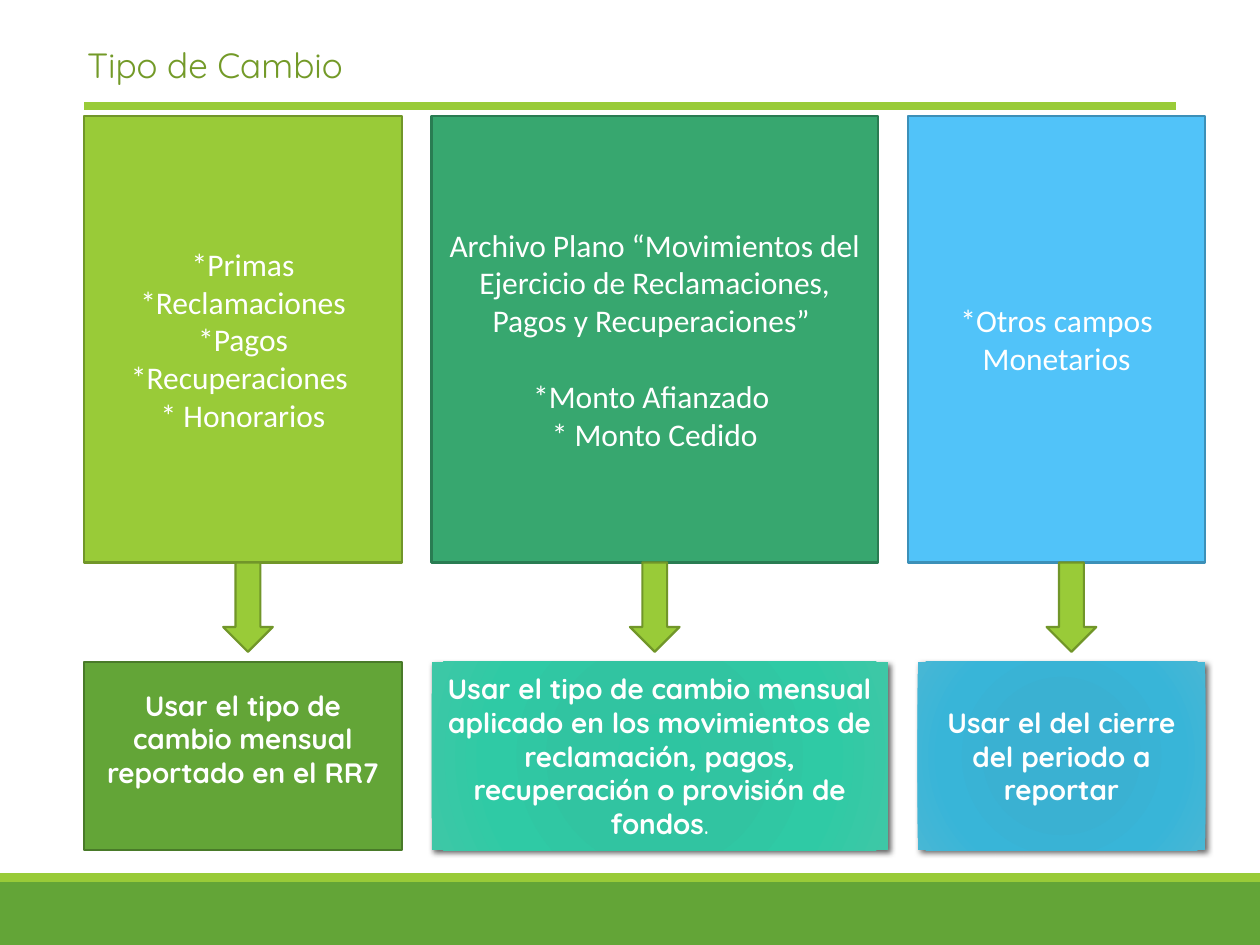
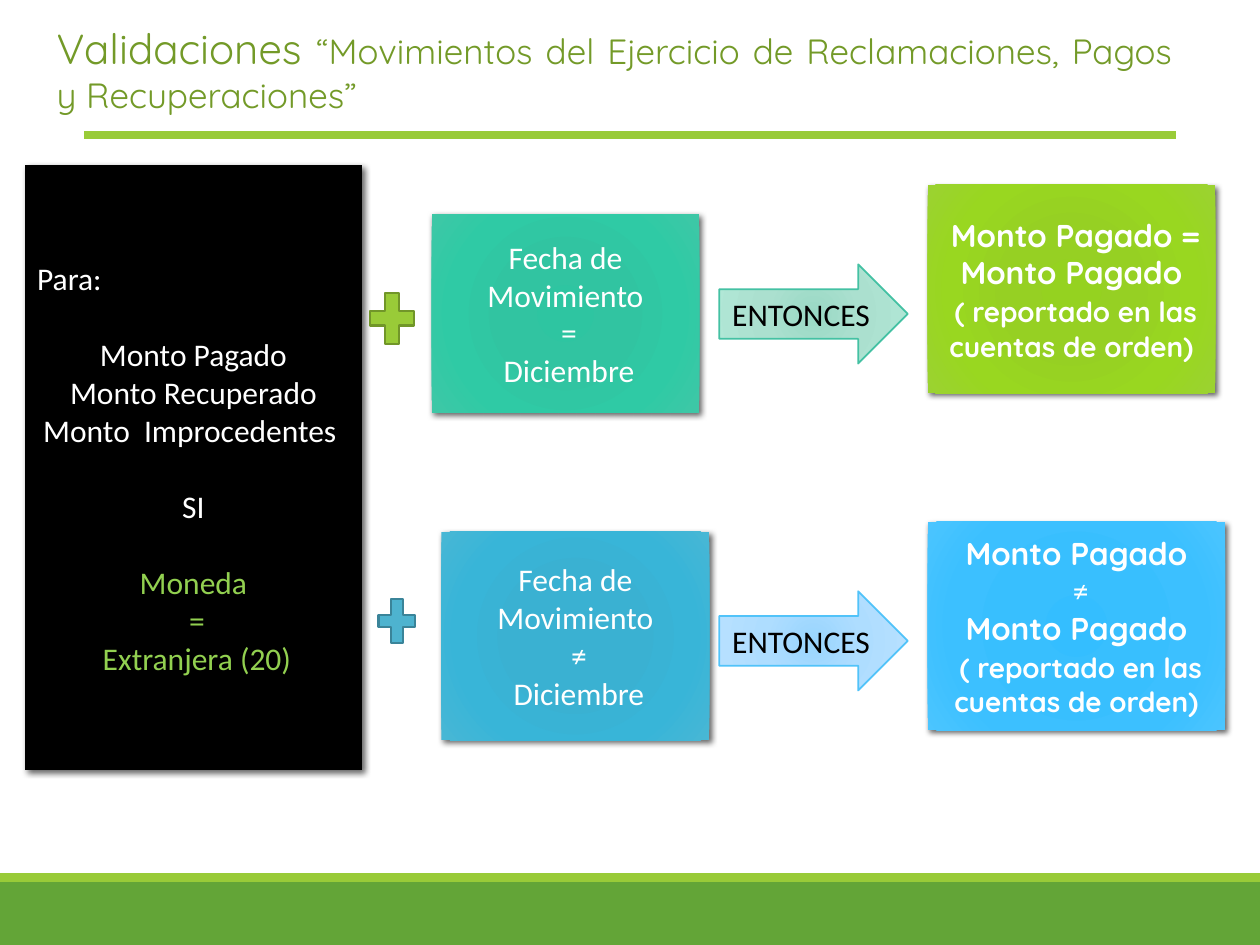
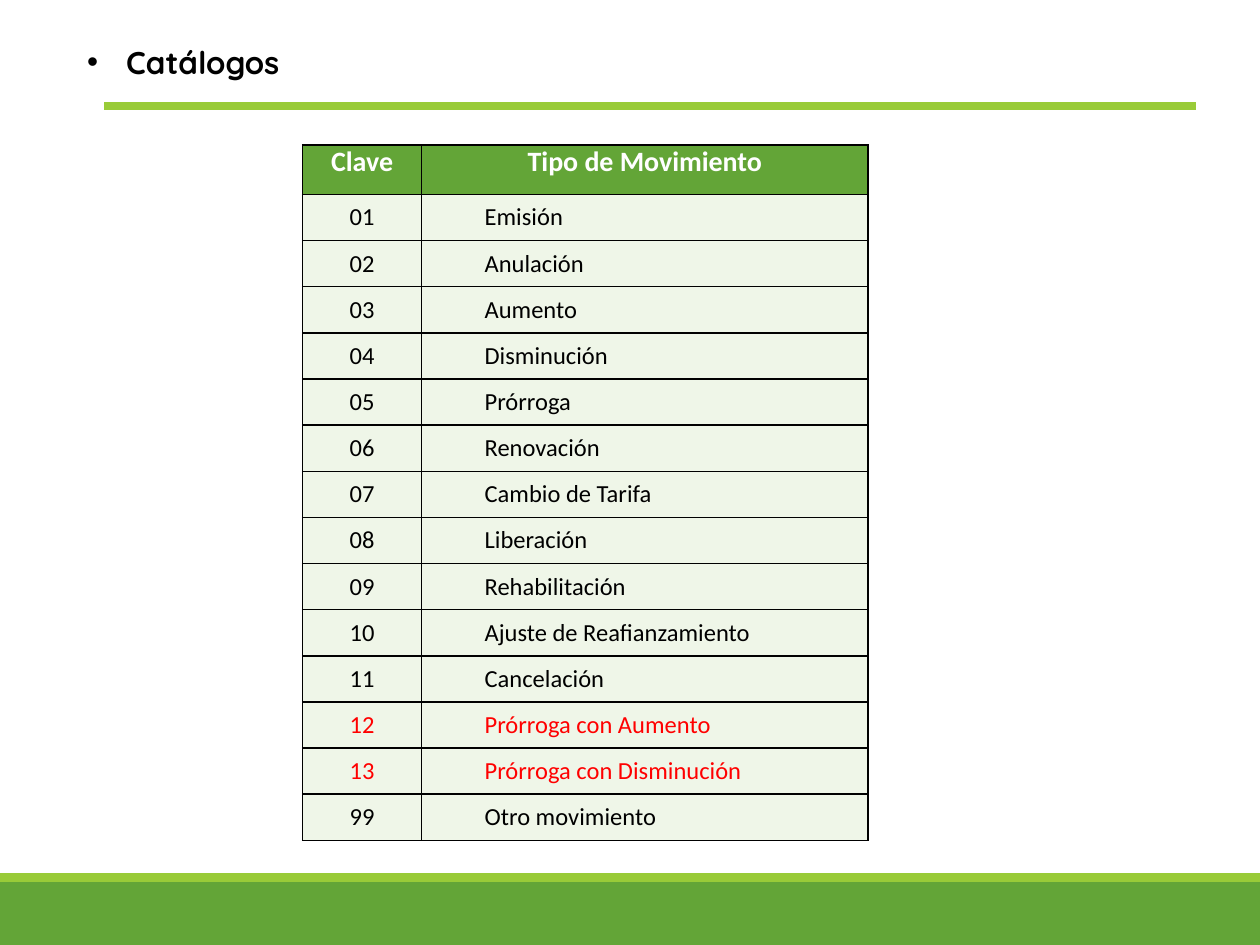
from lxml.etree import SubElement
from pptx import Presentation
from pptx.dml.color import RGBColor
from pptx.enum.shapes import MSO_CONNECTOR, MSO_SHAPE
from pptx.enum.text import MSO_ANCHOR, MSO_AUTO_SIZE, PP_ALIGN
from pptx.oxml.ns import qn
from pptx.util import Cm, Pt

WHITE = RGBColor(0xFF, 0xFF, 0xFF)
BLACK = RGBColor(0, 0, 0)
RED = RGBColor(0xFF, 0, 0)
LIME = RGBColor(0x99, 0xCB, 0x38)
OLIVE = RGBColor(0x71, 0x96, 0x29)
GREEN = RGBColor(0x63, 0xA5, 0x37)
MOSS = RGBColor(0x49, 0x7A, 0x29)
JADE = RGBColor(0x37, 0xA7, 0x6F)
PINE = RGBColor(0x29, 0x7C, 0x52)
SKY = RGBColor(0x51, 0xC3, 0xF9)
STEEL = RGBColor(0x3C, 0x90, 0xB8)
CYAN = RGBColor(0x4E, 0xB3, 0xCF)
TEAL = RGBColor(0x3A, 0x84, 0x99)
MINT = RGBColor(0x44, 0xC1, 0xA3)
TITLE = RGBColor(0x73, 0x9A, 0x28)
ACCENT = RGBColor(0x92, 0xD0, 0x50)
PALE = RGBColor(0xEF, 0xF6, 0xE8)

# Radial gradients: (position in percent, colour)
SEA_FADE = [(0, "2EC5A1"), (34, "31C4A1"), (70, "2FCAA5"), (100, "3EC7A6")]
LAKE_FADE = [(0, "37B1D3"), (34, "3AB1D2"), (70, "38B5D8"), (100, "48B7D5")]
LIME_FADE = [(0, "95D220"), (34, "96D023"), (70, "99D720"), (100, "9BD231")]
SKY_FADE = [(0, "34BEFF"), (34, "38BFFE"), (70, "3CC0FF"), (100, "4BC5FF")]
MINT_FADE = [(0, "9AD9C5"), (45, "ABE0CF"), (100, "B1E7D6")]
ICE_FADE = [(0, "99D5FE"), (45, "AEDDFF"), (100, "B8E1FF")]

BODY = dict(name="Calibri", size=18, color=WHITE, bold=False)
STRONG = dict(name="Quicksand", size=18, color=WHITE, bold=True)
NOTE = STRONG | dict(size=16)
HEAD = dict(name="Quicksand", size=20, color=TITLE, bold=False)
SPOT = dict(color=ACCENT)
SMALL = dict(size=16)

# Each line is a string or a list of (text, style changes) runs.
# Source column: left, width, fill, line, lines, gaps
SOURCES = [
    (1.7, 6.4, LIME, OLIVE,
     ["*Primas", "*Reclamaciones", "*Pagos", "*Recuperaciones ",
      "* Honorarios"], ()),
    (8.7, 9, JADE, PINE,
     ["Archivo Plano “Movimientos del Ejercicio de Reclamaciones, "
      "Pagos y Recuperaciones” ", "*Monto Afianzado ", "* Monto Cedido"], (1,)),
    (18.3, 6, SKY, STEEL, ["*Otros campos Monetarios"], ()),
]
# Rate to use: left, width, fill, line, lines
RATES = [
    (1.7, 6.4, GREEN, MOSS,
     ["Usar el tipo de cambio mensual reportado en el RR7"]),
    (8.7, 9.2, SEA_FADE, None,
     [[("Usar el tipo de cambio mensual aplicado en los movimientos de "
        "reclamación, pagos, recuperación o provisión de fondos", {}),
       (".", dict(bold=False))]]),
    (18.5, 5.8, LAKE_FADE, None, ["Usar el del cierre del periodo a reportar"]),
]
ARROWS = [4.5, 12.7, 21.1]

CASE = ["Para:", "Monto Pagado", "Monto Recuperado", "Monto  Improcedentes ",
        "SI", [("Moneda", SPOT)], [(" =", SPOT)], [(" Extranjera (20)", SPOT)]]
REPORT = [(" ", {}), ("( reportado en las cuentas de orden)", SMALL)]
# One dict for each rule; boxes are left, top, width, height
RULES = [
    dict(plus=(7.3, 5.72, 1.2, 1.4), ink=(LIME, OLIVE),
         date=(8.7, 4.32, 5.4, 4), fade=SEA_FADE, sign=" =",
         arrow=(14.5, 5.33, 3.8, 2), tint=(MINT_FADE, MINT),
         end=(18.7, 3.73, 5.8, 4.2), glow=LIME_FADE,
         lines=[" Monto Pagado = ", "Monto Pagado", REPORT]),
    dict(plus=(7.5, 11.92, 1, 1.2), ink=(CYAN, TEAL),
         date=(8.9, 10.72, 5.4, 4.2), fade=LAKE_FADE, sign=" ≠",
         arrow=(14.5, 11.92, 3.8, 2), tint=(ICE_FADE, SKY),
         end=(18.7, 10.52, 6, 4.2), glow=SKY_FADE,
         lines=["Monto Pagado",
                [(" ", {}), ("≠", dict(name="Calibri", bold=False))],
                "Monto Pagado", REPORT]),
]

HEADS = ("Clave", "Tipo de Movimiento")
MOVES = [
    ("01", "Emisión"), ("02", "Anulación"), ("03", "Aumento"),
    ("04", "Disminución"), ("05", "Prórroga"), ("06", "Renovación"),
    ("07", "Cambio de Tarifa"), ("08", "Liberación"),
    ("09", "Rehabilitación "), ("10", "Ajuste de Reafianzamiento"),
    ("11", "Cancelación"), ("12", "Prórroga con Aumento"),
    ("13", "Prórroga con Disminución"), ("99", "Otro movimiento "),
]
NEW = ("12", "13")


def style_run(run, name, size, color, bold):
    font = run.font
    font.name, font.size, font.bold = name, Pt(size), bold
    font.color.rgb = color


def write(frame, lines, style, align=PP_ALIGN.CENTER, gaps=()):
    """Write the lines; those numbered in gaps get one line of space above."""
    for i, line in enumerate(lines):
        para = frame.paragraphs[0] if i == 0 else frame.add_paragraph()
        para.alignment = align
        if i in gaps:
            para.space_before = Pt(22)
        for text, change in [(line, {})] if isinstance(line, str) else line:
            run = para.add_run()
            run.text = text
            style_run(run, **(style | change))


def fade(shape, stops):
    shape.fill.gradient()
    grad = shape._element.spPr.find(qn("a:gradFill"))
    for child in list(grad):
        grad.remove(child)
    group = SubElement(grad, qn("a:gsLst"))
    for place, color in stops:
        stop = SubElement(group, qn("a:gs"), pos=str(place * 1000))
        SubElement(stop, qn("a:srgbClr"), val=color)
    track = SubElement(grad, qn("a:path"), path="circle")
    SubElement(track, qn("a:fillToRect"), {side: "100000" for side in "ltrb"})


def cast(shape):
    """Add the soft shadow at the lower right."""
    effects = shape._element.spPr.find(qn("a:effectLst"))
    shade = SubElement(effects, qn("a:outerShdw"), blurRad=str(Pt(3.5)),
                       dist=str(Pt(2)), dir="2700000", algn="tl",
                       rotWithShape="0")
    color = SubElement(shade, qn("a:srgbClr"), val="000000")
    SubElement(color, qn("a:alpha"), val="60000")


def draw(slide, kind, box, fill, line=None, width=1.25):
    shape = slide.shapes.add_shape(kind, *map(Cm, box))
    shape.shadow.inherit = False
    if isinstance(fill, list):
        fade(shape, fill)
    else:
        shape.fill.solid()
        shape.fill.fore_color.rgb = fill
    if line is None:
        shape.line.fill.background()
    else:
        shape.line.color.rgb = line
        shape.line.width = Pt(width)
    return shape


def panel(slide, box, fill, line, lines, style, gaps=()):
    """Draw a text box; one without an outline casts a shadow."""
    shape = draw(slide, MSO_SHAPE.FLOWCHART_PROCESS, box, fill, line)
    if line is None:
        cast(shape)
    frame = shape.text_frame
    frame.vertical_anchor = MSO_ANCHOR.MIDDLE
    write(frame, lines, style, gaps=gaps)
    return frame


def add_bands(layout, slide):
    """Put the footer bands on the layout, so that all slides show them."""
    for spare in list(layout.placeholders)[1:]:
        spare._element.getparent().remove(spare._element)
    for top, height, color in [(17.78, 1.27, GREEN), (17.6, 0.18, LIME)]:
        band = draw(slide, MSO_SHAPE.RECTANGLE, (0, top, 25.4, height), color)
        layout.shapes._spTree.append(band._element)


def add_title(slide, box, runs, left, top):
    """Fill the title and draw the rule that starts at left, top."""
    title = slide.shapes.title
    title.left, title.top, title.width, title.height = map(Cm, box)
    frame = title.text_frame
    frame.auto_size = MSO_AUTO_SIZE.NONE
    frame.word_wrap = True
    frame.vertical_anchor = MSO_ANCHOR.TOP
    write(frame, [runs], HEAD, PP_ALIGN.JUSTIFY)
    rule = slide.shapes.add_connector(MSO_CONNECTOR.STRAIGHT, Cm(left), Cm(top),
                                      Cm(left + 22), Cm(top))
    rule.line.color.rgb = LIME
    rule.line.width = Pt(4.5)
    SubElement(rule._element.spPr, qn("a:effectLst"))
    return frame


def show_rates(slide):
    add_title(slide, (1.5, 0.74, 22.2, 1.12), [("Tipo de Cambio", {})], 1.7, 2.13)
    for left, width, fill, line, lines, gaps in SOURCES:
        panel(slide, (left, 2.34, width, 9), fill, line, lines, BODY, gaps)
    for left, width, fill, line, lines in RATES:
        frame = panel(slide, (left, 13.34, width, 3.8), fill, line, lines, NOTE)
        if line is not None:
            frame.margin_bottom = Cm(0.83)
    for left in ARROWS:
        draw(slide, MSO_SHAPE.DOWN_ARROW, (left, 11.34, 1, 1.8), LIME, OLIVE)


def show_checks(slide):
    runs = [("Validaciones ", dict(size=24)),
            ("“Movimientos del Ejercicio de Reclamaciones, "
             "Pagos y Recuperaciones”", {})]
    add_title(slide, (0.89, 0.33, 23, 2.13), runs, 1.7, 2.72)
    frame = panel(slide, (0.5, 3.33, 6.8, 12.2), BLACK, None, CASE, BODY,
                  gaps=(1, 4, 5))
    frame.paragraphs[0].alignment = PP_ALIGN.LEFT
    for rule in RULES:
        draw(slide, MSO_SHAPE.MATH_PLUS, rule["plus"], *rule["ink"])
        panel(slide, rule["date"], rule["fade"], None,
              ["Fecha de Movimiento", rule["sign"], " Diciembre"], BODY)
        arrow = draw(slide, MSO_SHAPE.RIGHT_ARROW, rule["arrow"], *rule["tint"],
                     width=1)
        frame = arrow.text_frame
        frame.margin_left = frame.margin_right = Cm(0.2)
        frame.vertical_anchor = MSO_ANCHOR.MIDDLE
        write(frame, ["ENTONCES"], BODY | dict(color=BLACK))
        panel(slide, rule["end"], rule["glow"], None, rule["lines"], STRONG)


def fill_cell(cell, text, fill, style, align):
    cell.margin_left = cell.margin_right = 0
    cell.margin_top = cell.margin_bottom = 0
    props = cell._tc.get_or_add_tcPr()
    for side in "LRTB":
        edge = SubElement(props, qn("a:ln" + side), w=str(Pt(1)))
        ink = SubElement(edge, qn("a:solidFill"))
        SubElement(ink, qn("a:srgbClr"), val=str(BLACK))
    cell.fill.solid()
    cell.fill.fore_color.rgb = fill
    write(cell.text_frame, [text], style, align)


def show_moves(slide):
    look = dict(size=18, color=BLACK, bold=True)
    frame = add_title(slide, (1.5, 0.74, 22, 1.8), [("Catálogos", look)], 2.1, 2.13)
    props = frame.paragraphs[0]._p.get_or_add_pPr()
    props.set("marL", str(Cm(0.79)))
    props.set("indent", str(Cm(-0.79)))
    SubElement(props, qn("a:buFont"), typeface="Arial")
    SubElement(props, qn("a:buChar"), char="•")

    count = len(MOVES) + 1
    table = slide.shapes.add_table(count, 2, Cm(6.1), Cm(2.92), Cm(11.4),
                                   Cm(14.08)).table
    table.columns[0].width, table.columns[1].width = Cm(2.4), Cm(9)
    table.rows[0].height = Cm(1)
    for col, text in enumerate(HEADS):
        fill_cell(table.cell(0, col), text, GREEN,
                  BODY | dict(size=16, bold=True), PP_ALIGN.CENTER)
    for row, (key, move) in enumerate(MOVES, 1):
        table.rows[row].height = Cm(0.93)
        style = BODY | dict(size=14, color=RED if key in NEW else BLACK)
        code, name = table.cell(row, 0), table.cell(row, 1)
        fill_cell(code, key, PALE, style, PP_ALIGN.CENTER)
        fill_cell(name, move, PALE, style, PP_ALIGN.JUSTIFY)
        code.vertical_anchor = name.vertical_anchor = MSO_ANCHOR.MIDDLE
        indent = name.text_frame.paragraphs[0]._p.get_or_add_pPr()
        indent.set("marL", str(Cm(1.27)))


def main():
    deck = Presentation()
    deck.slide_width, deck.slide_height = Cm(25.4), Cm(19.05)
    layout = deck.slide_layouts[5]
    slides = [deck.slides.add_slide(layout) for _ in range(3)]
    add_bands(layout, slides[0])
    for show, slide in zip((show_rates, show_checks, show_moves), slides):
        show(slide)
    deck.save("out.pptx")


if __name__ == "__main__":
    main()
